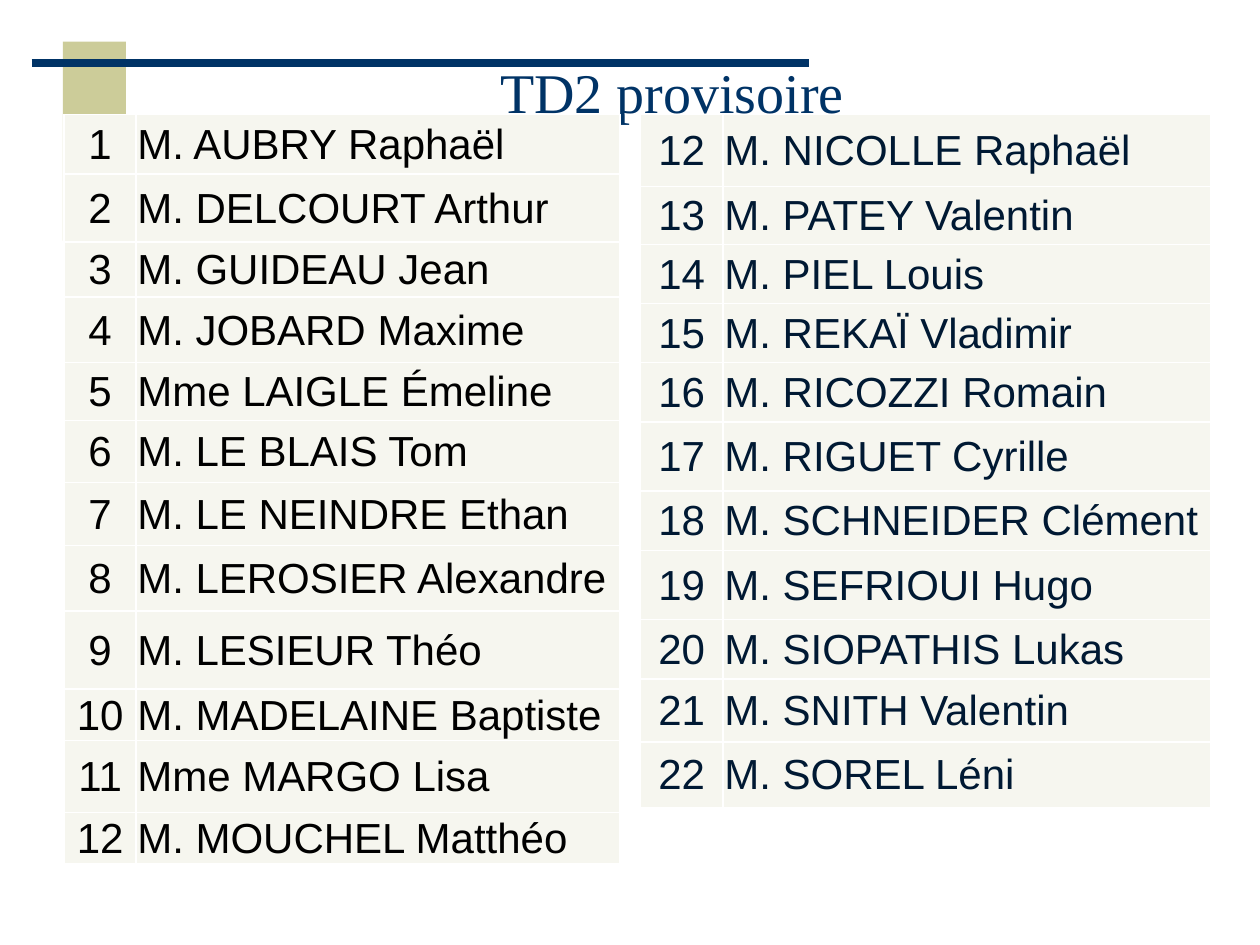
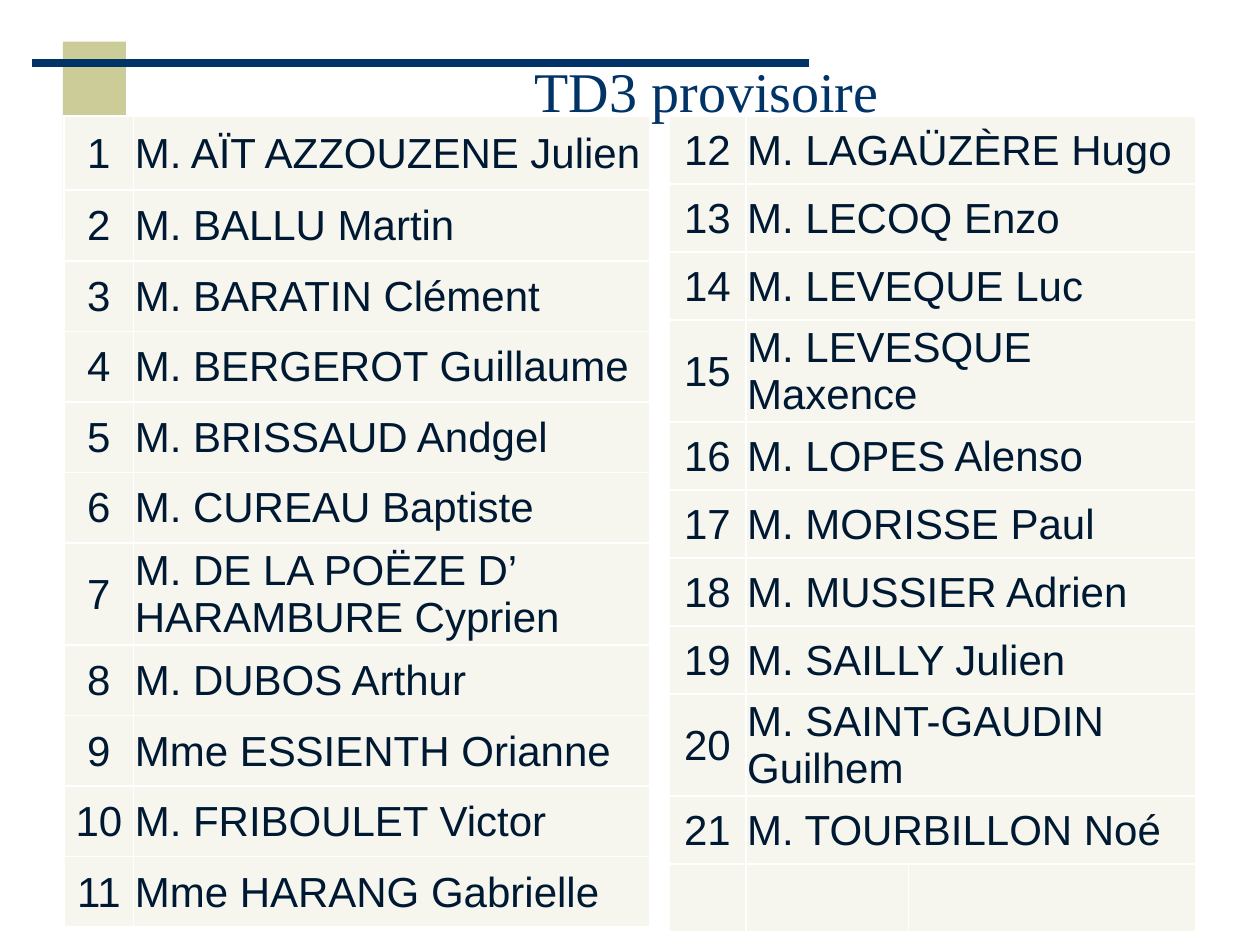
from lxml import etree
from pptx import Presentation
from pptx.dml.color import RGBColor
from pptx.enum.shapes import MSO_CONNECTOR, MSO_SHAPE
from pptx.enum.text import MSO_ANCHOR, PP_ALIGN
from pptx.oxml.ns import qn
from pptx.util import Emu, Pt

PX = 9144
RECTANGLE = MSO_SHAPE.RECTANGLE
STRAIGHT = MSO_CONNECTOR.STRAIGHT
MIDDLE = MSO_ANCHOR.MIDDLE
LEFT, CENTER = PP_ALIGN.LEFT, PP_ALIGN.CENTER
COLORS = {
    "navy": "003366",
    "ink": "001933",
    "black": "000000",
    "khaki": "CCCC99",
    "cell": "F6F6EF",
    "border": "FFFFFF",
}

TD2_FIRST = [
    "M. AUBRY Raphaël", "M. DELCOURT Arthur", "M. GUIDEAU Jean",
    "M. JOBARD Maxime", "Mme LAIGLE Émeline", "M. LE BLAIS Tom",
    "M. LE NEINDRE Ethan", "M. LEROSIER Alexandre", "M. LESIEUR Théo",
    "M. MADELAINE Baptiste", "Mme MARGO Lisa", "M. MOUCHEL Matthéo",
]
TD2_SECOND = [
    "M. NICOLLE Raphaël", "M. PATEY Valentin", "M. PIEL Louis",
    "M. REKAÏ Vladimir", "M. RICOZZI Romain", "M. RIGUET Cyrille",
    "M. SCHNEIDER Clément", "M. SEFRIOUI Hugo", "M. SIOPATHIS Lukas",
    "M. SNITH Valentin", "M. SOREL Léni",
]
TD3_FIRST = [
    "M. AÏT AZZOUZENE Julien", "M. BALLU Martin", "M. BARATIN Clément",
    "M. BERGEROT Guillaume", "M. BRISSAUD Andgel", "M. CUREAU Baptiste",
    "M. DE LA POËZE D’ HARAMBURE Cyprien", "M. DUBOS Arthur",
    "Mme ESSIENTH Orianne", "M. FRIBOULET Victor", "Mme HARANG Gabrielle",
]
TD3_SECOND = [
    "M. LAGAÜZÈRE Hugo", "M. LECOQ Enzo", "M. LEVEQUE Luc",
    "M. LEVESQUE Maxence", "M. LOPES Alenso", "M. MORISSE Paul",
    "M. MUSSIER Adrien", "M. SAILLY Julien", "M. SAINT-GAUDIN Guilhem",
    "M. TOURBILLON Noé", "",
]
TD2_FIRST_HEIGHTS = [47, 54, 44, 52, 46, 49, 50, 52, 62, 37, 57, 39]
TD2_SECOND_HEIGHTS = [57, 46, 47, 47, 47, 55, 47, 55, 47, 50, 52]
TD3_FIRST_HEIGHTS = [59] + [56] * 10
TD3_SECOND_HEIGHTS = [81 if row in (3, 8) else 54 for row in range(11)]


def px(*lengths):
    return [Emu(length * PX) for length in lengths]


def rgb(name):
    return RGBColor.from_string(COLORS[name])


class ClassList:
    def __init__(self):
        self.deck = Presentation()
        self.deck.slide_width, self.deck.slide_height = px(1000, 750)
        self.page = None

    def new_page(self, title, left, width, height):
        self.page = self.deck.slides.add_slide(self.deck.slide_layouts[6])
        self.block(50, 33, 50, 158)
        self.rule(25, 642, 50)
        self.title(title, left, 52, width, height)

    def block(self, *place):
        shape = self.page.shapes.add_shape(RECTANGLE, *px(*place))
        shape.shadow.inherit = False
        shape.fill.solid()
        shape.fill.fore_color.rgb = rgb("khaki")
        shape.line.fill.background()

    def rule(self, start, end, top):
        line = self.page.shapes.add_connector(STRAIGHT, *px(start, top, end, top))
        line.line.color.rgb = rgb("navy")
        line.line.width = Pt(4.5)
        etree.SubElement(line._element.spPr, qn("a:effectLst"))

    def fill_para(self, para, text, font, size, color, align):
        para.text = text
        para.alignment = align
        for span in para.runs:
            span.font.name = font
            span.font.size = Pt(size)
            span.font.color.rgb = rgb(color)

    def title(self, text, *place):
        frame = self.page.shapes.add_textbox(*px(*place)).text_frame
        frame.word_wrap = True
        frame.vertical_anchor = MIDDLE
        para = frame.paragraphs[0]
        self.fill_para(para, text, "Times New Roman", 32, "navy", CENTER)
        para.line_spacing = 0.85

    def roster(self, left, top, widths, heights, names, first, color="ink"):
        table = self.page.shapes.add_table(
            len(heights), len(widths),
            *px(left, top, sum(widths), sum(heights))).table
        table.first_row = table.horz_banding = False
        for column, width in zip(table.columns, px(*widths)):
            column.width = width
        for row, height in zip(table.rows, px(*heights)):
            row.height = height
        for cell in table.iter_cells():
            self.style_cell(cell)
        for index, name in enumerate(names):
            if not name:
                continue
            number_cell, name_cell = table.cell(index, 0), table.cell(index, 1)
            if len(widths) > 2:
                name_cell.merge(table.cell(index, len(widths) - 1))
            for cell, text, align in ((number_cell, str(first + index), CENTER),
                                      (name_cell, name, LEFT)):
                para = cell.text_frame.paragraphs[0]
                self.fill_para(para, text, "Arial", 24, color, align)

    def style_cell(self, cell):
        cell.vertical_anchor = MIDDLE
        cell.margin_left, cell.margin_right, cell.margin_top, cell.margin_bottom = px(1, 1, 1, 0)
        properties = cell._tc.get_or_add_tcPr()
        for side in ("lnL", "lnR", "lnT", "lnB"):
            border = etree.SubElement(properties, qn(f"a:{side}"), w=str(Pt(1)))
            fill = etree.SubElement(border, qn("a:solidFill"))
            etree.SubElement(fill, qn("a:srgbClr"), val=COLORS["border"])
        cell.fill.solid()
        cell.fill.fore_color.rgb = rgb("cell")


def main():
    lists = ClassList()

    lists.new_page("TD2 provisoire", 102, 863, 49)
    lists.roster(51, 91, [57, 384], TD2_FIRST_HEIGHTS, TD2_FIRST, 1, "black")
    lists.roster(508, 91, [66, 387], TD2_SECOND_HEIGHTS, TD2_SECOND, 12)

    lists.new_page("TD3 provisoire", 122, 878, 47)
    lists.roster(51, 92, [55, 410], TD3_FIRST_HEIGHTS, TD3_FIRST, 1)
    lists.roster(531, 92, [61, 129, 228], TD3_SECOND_HEIGHTS, TD3_SECOND, 12)

    lists.deck.save("out.pptx")


if __name__ == "__main__":
    main()
